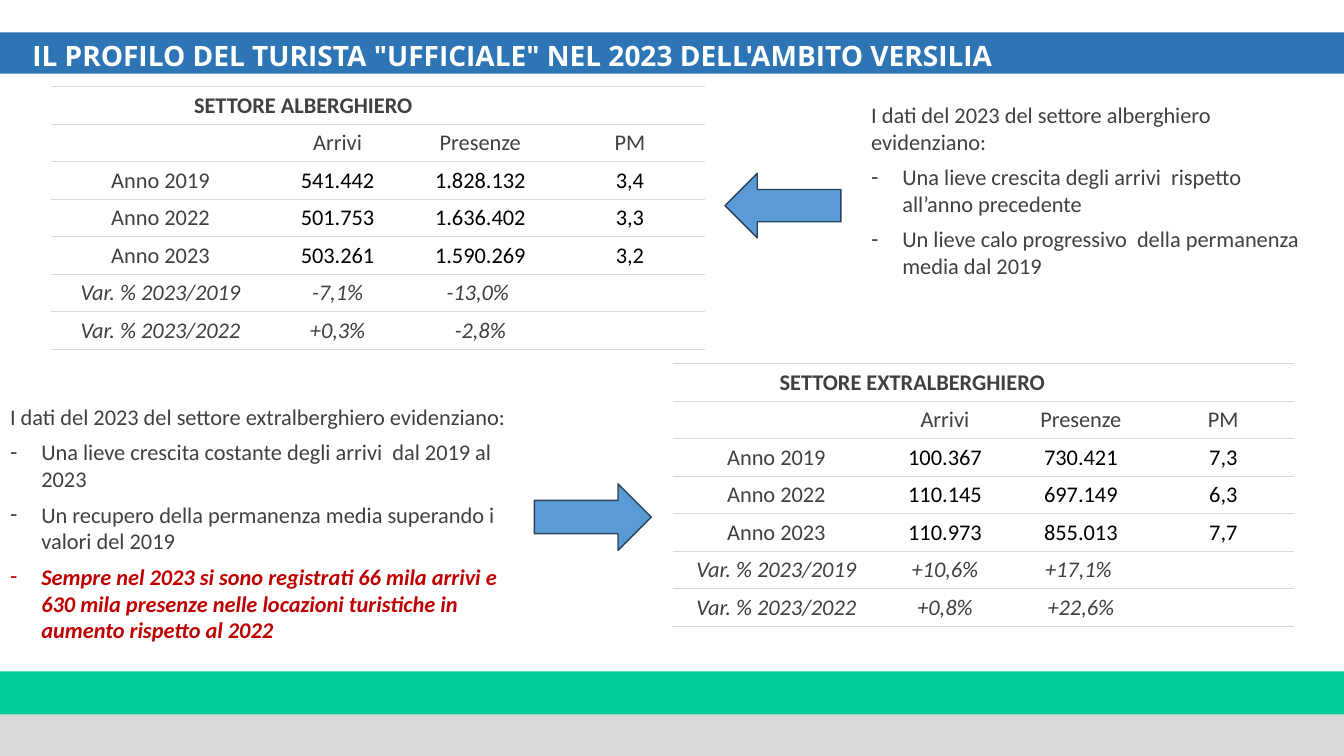
from dataclasses import dataclass
from lxml import etree
from pptx import Presentation
from pptx import util as u
from pptx.dml.color import RGBColor
from pptx.enum import shapes, text
from pptx.oxml import ns


@dataclass(frozen=True)
class Theme:
    head: str = "Open Sans"
    body: str = "Calibri"
    big: int = 20
    size: int = 16
    white: str = "FFFFFF"
    black: str = "000000"
    gray: str = "404040"
    red: str = "C00000"
    rule: str = "D9D9D9"
    bar: str = "2E75B6"
    green: str = "00CC99"
    blue: str = "5B9BD5"
    edge: str = "27435D"


def node(parent, tag, **attrs):
    return etree.SubElement(parent, ns.qn(tag), attrs)


class Page:
    def __init__(self, deck, theme):
        self.theme = theme
        self.slide = deck.slides.add_slide(deck.slide_layouts[3])

    def font(self, para, color, size=None, face=None, bold=False, italic=False):
        for run in para.runs:
            font = run.font
            font.name = face or self.theme.body
            font.size = u.Pt(size or self.theme.size)
            font.bold, font.italic = bold, italic
            font.color.rgb = RGBColor.from_string(color)

    def shape(self, kind, box, fill, line=None):
        item = self.slide.shapes.add_shape(kind, *map(u.Inches, box))
        item.shadow.inherit = False
        item.fill.solid()
        item.fill.fore_color.rgb = RGBColor.from_string(fill)
        if line:
            item.line.color.rgb = RGBColor.from_string(line)
            item.line.width = u.Pt(1)
        else:
            item.line.fill.background()

    def band(self, top, high, fill):
        self.shape(shapes.MSO_SHAPE.RECTANGLE, (0, top, 13.33, high), fill)

    def arrow(self, kind, box):
        self.shape(kind, box, self.theme.blue, self.theme.edge)

    def place(self, index, box):
        item = self.slide.placeholders[index]
        item.left, item.top, item.width, item.height = map(u.Inches, box)
        self.slide.shapes._spTree.append(item._element)
        frame = item.text_frame
        frame.word_wrap = True
        return frame

    def title(self, words, box):
        frame = self.place(0, box)
        frame.text = words
        frame.auto_size = text.MSO_AUTO_SIZE.NONE
        frame.vertical_anchor = text.MSO_ANCHOR.MIDDLE
        para = frame.paragraphs[0]
        para.alignment = text.PP_ALIGN.LEFT
        self.font(para, self.theme.white, self.theme.big, self.theme.head, True)

    def notes(self, index, box, lines, strong=None):
        frame = self.place(index, box)
        frame.text = "\n".join(lines)
        frame.auto_size = text.MSO_AUTO_SIZE.SHAPE_TO_FIT_TEXT
        frame.vertical_anchor = text.MSO_ANCHOR.TOP
        for row, para in enumerate(frame.paragraphs):
            hot = row == strong
            color = self.theme.red if hot else self.theme.gray
            para.alignment = text.PP_ALIGN.LEFT
            para.space_before = para.space_after = u.Pt(3)
            self.font(para, color, bold=hot, italic=hot)
            props = para._p.get_or_add_pPr()
            dent = u.Inches(0.31) if row else 0
            props.set("marL", str(dent))
            props.set("indent", str(-dent))
            if row:
                node(node(props, "a:buClr"), "a:srgbClr", val=color)
                node(props, "a:buChar", char="-")
            else:
                node(props, "a:buNone")

    def border(self, cell):
        props = cell._tc.get_or_add_tcPr()
        for side in "LR":
            node(node(props, f"a:ln{side}", w="0"), "a:noFill")
        for side in "TB":
            line = node(props, f"a:ln{side}", w=str(u.Pt(0.96)))
            node(node(line, "a:solidFill"), "a:srgbClr", val=self.theme.rule)
        cell.fill.background()

    def cell(self, cell, words, row, col):
        number = 2 <= row <= 4 and col > 0
        cell.text = words
        cell.vertical_anchor = text.MSO_ANCHOR.MIDDLE
        if number:
            cell.vertical_anchor = text.MSO_ANCHOR.BOTTOM
            cell.margin_left = cell.margin_right = u.Inches(0.01)
        para = cell.text_frame.paragraphs[0]
        para.alignment = text.PP_ALIGN.CENTER
        color = self.theme.black if number else self.theme.gray
        self.font(para, color, bold=row == 0, italic=row > 4)
        if not words:
            node(para._p, "a:endParaRPr", sz=str(self.theme.size * 100))
        self.border(cell)

    def table(self, left, top, wide, rows):
        high = 0.36
        box = map(u.Inches, (left, top, wide, high * len(rows)))
        grid = self.slide.shapes.add_table(len(rows), 4, *box).table
        grid.first_row = grid.horz_banding = False
        for col, share in zip(grid.columns, (0.334, 0.208, 0.229, 0.229)):
            col.width = u.Inches(wide * share)
        for r, row in enumerate(rows):
            grid.rows[r].height = u.Inches(high)
            for c, words in enumerate(row):
                self.cell(grid.cell(r, c), words, r, c)
        grid.cell(0, 0).merge(grid.cell(0, 2))


LABELS = ("", "Anno 2019", "Anno 2022", "Anno 2023",
          "Var. % 2023/2019", "Var. % 2023/2022")
HEADS = ("Arrivi", "Presenze", "PM")


def sector(name, *data):
    body = [(label, *vals) for label, vals in zip(LABELS, (HEADS, *data))]
    return [(name, "", "", ""), *body]


HOTEL = sector(
    "SETTORE ALBERGHIERO",
    ("541.442", "1.828.132", "3,4"),
    ("501.753", "1.636.402", "3,3"),
    ("503.261", "1.590.269", "3,2"),
    ("-7,1%", "-13,0% ", ""),
    ("+0,3%", "-2,8%", ""))
EXTRA = sector(
    "SETTORE EXTRALBERGHIERO",
    ("100.367", "730.421", "7,3"),
    ("110.145", "697.149", "6,3"),
    ("110.973", "855.013", "7,7"),
    ("+10,6%", "+17,1% ", ""),
    ("+0,8%", "+22,6%", ""))


def main():
    deck = Presentation()
    deck.slide_width, deck.slide_height = u.Inches(13.33), u.Inches(7.5)
    theme = Theme()
    page = Page(deck, theme)
    page.band(6.66, 0.43, theme.green)
    page.band(7.09, 0.41, theme.rule)
    page.band(0.32, 0.41, theme.bar)
    page.title("IL PROFILO DEL TURISTA \"UFFICIALE\" NEL 2023 DELL'AMBITO VERSILIA",
               (0.22, 0.33, 12.39, 0.44))
    page.table(0.51, 0.86, 6.48, HOTEL)
    page.table(6.67, 3.61, 6.17, EXTRA)
    page.notes(1, (0, 3.95, 5.3, 2.48), (
        "I dati del 2023 del settore extralberghiero evidenziano:",
        "Una lieve crescita costante degli arrivi  dal 2019 al 2023",
        "Un recupero della permanenza media superando i valori del 2019",
        "Sempre nel 2023 si sono registrati 66 mila arrivi e 630 mila presenze "
        "nelle locazioni turistiche in aumento rispetto al 2022"), strong=3)
    page.notes(2, (8.54, 0.95, 4.48, 1.86), (
        "I dati del 2023 del settore alberghiero evidenziano:",
        "Una lieve crescita degli arrivi  rispetto all’anno precedente",
        "Un lieve calo progressivo  della permanenza media dal 2019"))
    page.arrow(shapes.MSO_SHAPE.RIGHT_ARROW, (5.3, 4.8, 1.16, 0.66))
    page.arrow(shapes.MSO_SHAPE.LEFT_ARROW, (7.19, 1.72, 1.15, 0.64))
    deck.save("out.pptx")


if __name__ == "__main__":
    main()
